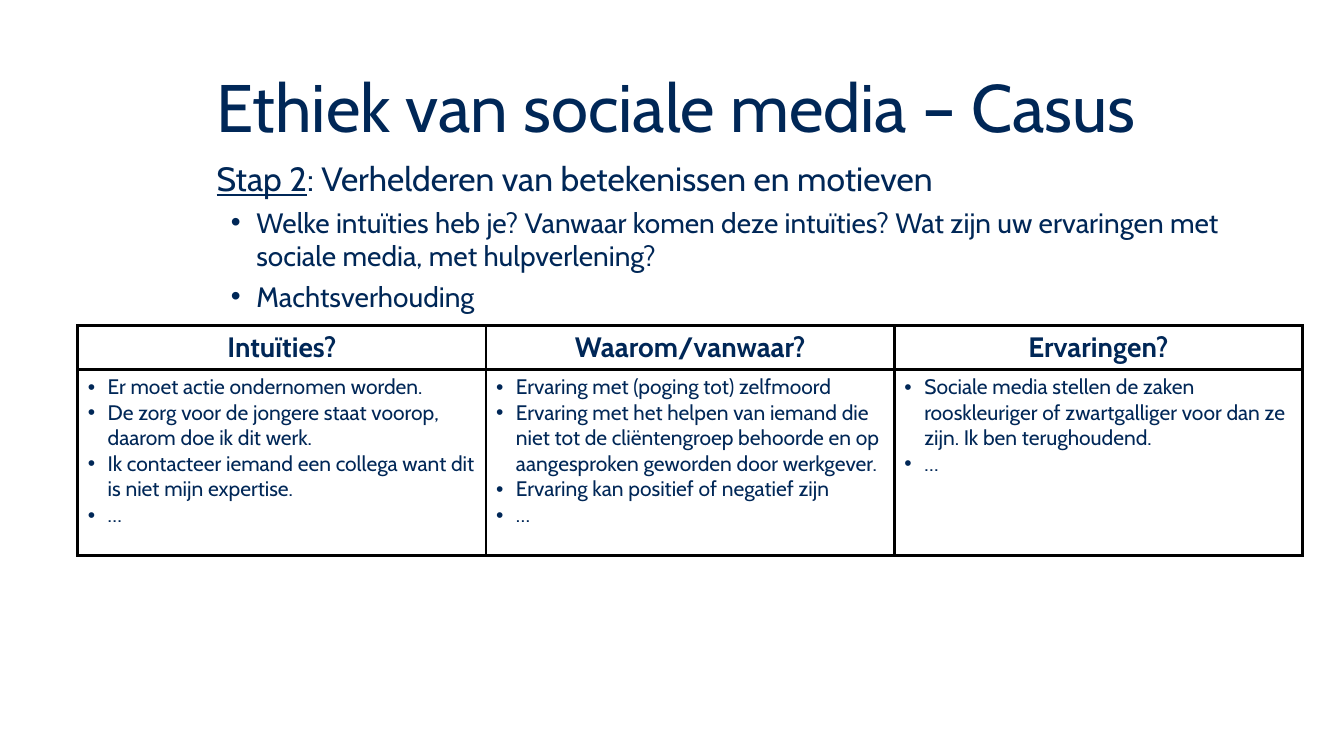
import pptx
import pptx.dml.color
import pptx.enum.text
import pptx.oxml
import pptx.oxml.ns
import pptx.util
from pptx.util import Cm

NAVY = pptx.dml.color.RGBColor(0x00, 0x27, 0x57)
BLACK = pptx.dml.color.RGBColor(0x00, 0x00, 0x00)
FONT = "Cabin"
CENTER = pptx.enum.text.PP_ALIGN.CENTER
LEFT = pptx.enum.text.PP_ALIGN.LEFT

QUESTIONS = [
    "Welke intuïties heb je? Vanwaar komen deze intuïties? "
    "Wat zijn uw ervaringen met sociale media, met hulpverlening?",
    "Machtsverhouding",
]
COLUMNS = {
    "Intuïties?": [
        "Er moet actie ondernomen worden.",
        "De zorg voor de jongere staat voorop, daarom doe ik dit werk.",
        "Ik contacteer iemand een collega want dit is niet mijn expertise.",
        "…",
    ],
    "Waarom/vanwaar?": [
        "Ervaring met (poging tot) zelfmoord",
        "Ervaring met het helpen van iemand die niet tot de cliëntengroep "
        "behoorde en op aangesproken geworden door werkgever.",
        "Ervaring kan positief of negatief zijn",
        "…",
    ],
    "Ervaringen?": [
        "Sociale media stellen de zaken rooskleuriger of zwartgalliger voor "
        "dan ze zijn. Ik ben terughoudend.",
        "…",
    ],
}
COLUMN_WIDTH = Cm(10.29)
ROW_HEIGHTS = [Cm(1.11), Cm(4.69)]


def add_run(paragraph, text, size, bold=False, underline=False):
    run = paragraph.add_run()
    run.text = text
    run.font.name = FONT
    run.font.size = pptx.util.Pt(size)
    run.font.bold = bold
    run.font.underline = underline
    run.font.color.rgb = NAVY


def set_bullet(paragraph, margin, hanging):
    properties = paragraph._p.get_or_add_pPr()
    properties.set("marL", str(margin))
    properties.set("indent", str(-hanging))
    for tag, name, value in (("a:buFont", "typeface", "Arial"), ("a:buChar", "char", "•")):
        bullet = pptx.oxml.parse_xml(f"<{tag} {pptx.oxml.ns.nsdecls('a')}/>")
        bullet.set(name, value)
        properties.append(bullet)


def add_paragraph(frame, text, size, bold=False, underlined="", align=LEFT,
                  space_before=0, line_spacing=1.0, bullet=None):
    paragraph = frame.paragraphs[0]
    if paragraph.runs:
        paragraph = frame.add_paragraph()
    if bullet:
        set_bullet(paragraph, *bullet)
    paragraph.alignment = align
    paragraph.space_before = pptx.util.Pt(space_before)
    paragraph.line_spacing = line_spacing
    if underlined:
        add_run(paragraph, underlined, size, bold, underline=True)
    add_run(paragraph, text, size, bold)


def add_text_box(slide, top, height, anchor):
    frame = slide.shapes.add_textbox(Cm(5.21), top, Cm(27.64), height).text_frame
    frame.word_wrap = True
    frame.vertical_anchor = anchor
    return frame


def set_borders(cell):
    properties = cell._tc.get_or_add_tcPr()
    for side in "LRTB":
        properties.append(pptx.oxml.parse_xml(
            f'<a:ln{side} {pptx.oxml.ns.nsdecls("a")} w="{pptx.util.Pt(2.25)}">'
            f'<a:solidFill><a:srgbClr val="{BLACK}"/></a:solidFill></a:ln{side}>'
        ))


def add_answer_table(slide):
    table = slide.shapes.add_table(
        len(ROW_HEIGHTS), len(COLUMNS), Cm(1.96), Cm(8.2),
        COLUMN_WIDTH * len(COLUMNS), sum(ROW_HEIGHTS),
    ).table
    table.first_row = False
    table.horz_banding = False
    for row, height in zip(table.rows, ROW_HEIGHTS):
        row.height = height
    for index, (heading, answers) in enumerate(COLUMNS.items()):
        table.columns[index].width = COLUMN_WIDTH
        add_paragraph(table.cell(0, index).text_frame, heading, size=20, bold=True, align=CENTER)
        for answer in answers:
            add_paragraph(table.cell(1, index).text_frame, answer, size=15,
                          bullet=(Cm(0.5), Cm(0.5)))
    for cell in table.iter_cells():
        set_borders(cell)
        cell.fill.background()


def main():
    presentation = pptx.Presentation()
    presentation.slide_width = Cm(33.87)
    presentation.slide_height = Cm(19.05)
    slide = presentation.slides.add_slide(presentation.slide_layouts[6])

    body = add_text_box(slide, Cm(3.85), Cm(13.18), pptx.enum.text.MSO_ANCHOR.TOP)
    add_paragraph(body, ": Verhelderen van betekenissen en motieven", size=24,
                  underlined="Stap 2")
    for question in QUESTIONS:
        add_paragraph(body, question, size=20, space_before=5, bullet=(Cm(1), Cm(0.64)))

    title = add_text_box(slide, Cm(1.75), Cm(2.1), pptx.enum.text.MSO_ANCHOR.MIDDLE)
    add_paragraph(title, "Ethiek van sociale media – Casus", size=48, line_spacing=0.9)

    add_answer_table(slide)
    presentation.save("out.pptx")


if __name__ == "__main__":
    main()
